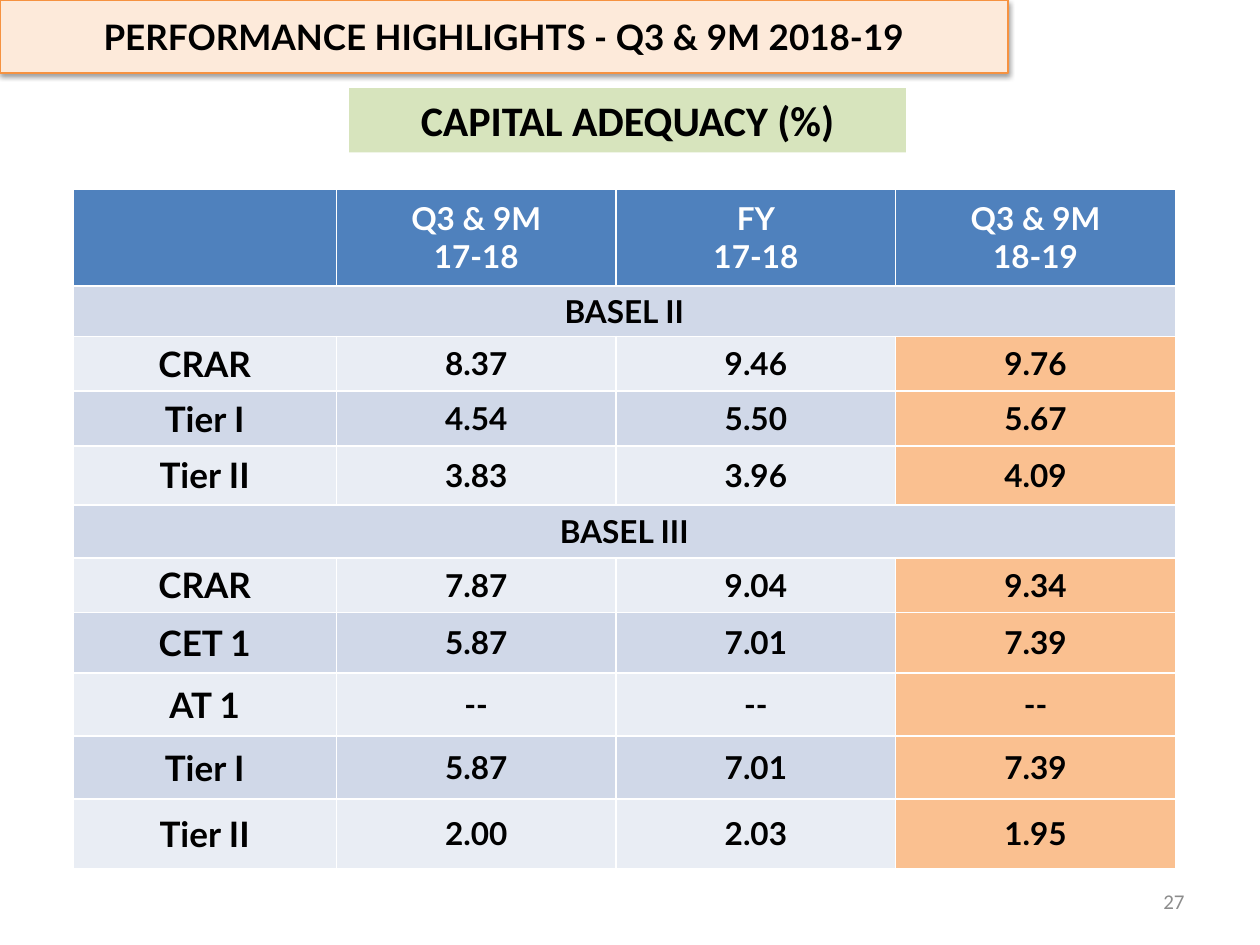
from dataclasses import dataclass

from lxml.etree import SubElement
from pptx import Presentation
from pptx.dml.color import RGBColor
from pptx.enum.shapes import MSO_SHAPE
from pptx.enum.text import MSO_ANCHOR, PP_ALIGN
from pptx.oxml import parse_xml
from pptx.oxml.ns import nsdecls, qn
from pptx.util import Inches, Pt

COLORS = {
    "black": "000000",
    "white": "FFFFFF",
    "gray": "8C8C8C",
    "banner": "FDEADA",
    "banner_line": "F69240",
    "subtitle": "D7E4BD",
    "header": "4F81BD",
    "band_dark": "D0D8E8",
    "band_light": "E9EDF4",
    "latest": "FAC090",
}


@dataclass(frozen=True)
class TextStyle:
    size: int
    color: str = "black"
    font: str = "Lato"
    bold: bool = True
    alignment: PP_ALIGN = PP_ALIGN.CENTER


@dataclass(frozen=True)
class CapitalRow:
    height: float
    label: str
    values: tuple[str, ...] = ()  # empty for a section row across the table


HEADER_HEIGHT = 0.77
HEADERS = ("", "Q3 & 9M\n17-18", "FY\n17-18", "Q3 & 9M\n18-19")
COLUMN_WIDTHS = (2.09, 2.22, 2.22, 2.22)
ROWS = (
    CapitalRow(0.4, "BASEL II"),
    CapitalRow(0.43, "CRAR", ("8.37", "9.46", "9.76")),
    CapitalRow(0.43, "Tier I", ("4.54", "5.50", "5.67")),
    CapitalRow(0.47, "Tier II", ("3.83", "3.96", "4.09")),
    CapitalRow(0.42, "BASEL III"),
    CapitalRow(0.43, "CRAR", ("7.87", "9.04", "9.34")),
    CapitalRow(0.48, "CET 1", ("5.87", "7.01", "7.39")),
    CapitalRow(0.5, "AT 1", ("--", "--", "--")),
    CapitalRow(0.5, "Tier I", ("5.87", "7.01", "7.39")),
    CapitalRow(0.55, "Tier II", ("2.00", "2.03", "1.95")),
)
VALUE_STYLE = TextStyle(18)
LABEL_STYLE = TextStyle(20)
HEADER_STYLE = TextStyle(18, "white")


def rgb(name: str) -> RGBColor:
    return RGBColor.from_string(COLORS[name])


def fill_solid(target, color: str) -> None:
    target.fill.solid()
    target.fill.fore_color.rgb = rgb(color)


def write_text(text_frame, text: str, style: TextStyle) -> None:
    """Write one paragraph for each line of the text."""
    text_frame.word_wrap = True
    for index, line in enumerate(text.split("\n")):
        paragraph = text_frame.paragraphs[0] if index == 0 else text_frame.add_paragraph()
        paragraph.alignment = style.alignment
        run = paragraph.add_run()
        run.text = line
        run.font.size = Pt(style.size)
        run.font.name = style.font
        run.font.bold = style.bold
        run.font.color.rgb = rgb(style.color)


def add_cell_borders(cell) -> None:
    properties = cell._tc.get_or_add_tcPr()
    for side in ("lnL", "lnR", "lnT", "lnB"):
        line = SubElement(properties, qn(f"a:{side}"), w=str(Pt(1)))
        fill = SubElement(line, qn("a:solidFill"))
        SubElement(fill, qn("a:srgbClr"), val=COLORS["white"])


def format_cell(cell, text: str, style: TextStyle, fill: str) -> None:
    add_cell_borders(cell)
    fill_solid(cell, fill)
    cell.vertical_anchor = MSO_ANCHOR.MIDDLE
    if text:
        write_text(cell.text_frame, text, style)


def add_banner(slide) -> None:
    title = slide.shapes.title
    title.left, title.top = Inches(0), Inches(0)
    title.width, title.height = Inches(8), Inches(0.58)
    fill_solid(title, "banner")
    title.line.color.rgb = rgb("banner_line")
    title.line.width = Pt(0.75)
    title.text_frame.vertical_anchor = MSO_ANCHOR.MIDDLE
    write_text(title.text_frame, "PERFORMANCE HIGHLIGHTS - Q3 & 9M 2018-19", TextStyle(20))
    title._element.spPr.append(parse_xml(
        f'<a:effectLst {nsdecls("a")}>'
        f'<a:outerShdw blurRad="{Pt(3.1)}" dist="{Pt(1.6)}" dir="5400000" rotWithShape="0">'
        f'<a:srgbClr val="{COLORS["black"]}"><a:alpha val="38000"/></a:srgbClr>'
        "</a:outerShdw></a:effectLst>"
    ))


def add_subtitle(slide) -> None:
    subtitle = slide.shapes.add_shape(
        MSO_SHAPE.RECTANGLE, Inches(2.77), Inches(0.7), Inches(4.42), Inches(0.51))
    subtitle.shadow.inherit = False
    fill_solid(subtitle, "subtitle")
    subtitle.line.fill.background()
    subtitle.text_frame.vertical_anchor = MSO_ANCHOR.TOP
    write_text(subtitle.text_frame, "CAPITAL ADEQUACY (%)", TextStyle(24, font="Calibri"))


def add_capital_table(slide) -> None:
    heights = (HEADER_HEIGHT, *(row.height for row in ROWS))
    table = slide.shapes.add_table(
        len(heights), len(COLUMN_WIDTHS), Inches(0.58), Inches(1.5),
        Inches(sum(COLUMN_WIDTHS)), Inches(sum(heights))).table
    for column, width in zip(table.columns, COLUMN_WIDTHS):
        column.width = Inches(width)
    for table_row, height in zip(table.rows, heights):
        table_row.height = Inches(height)

    last_column = len(COLUMN_WIDTHS) - 1
    for column_index, header in enumerate(HEADERS):
        format_cell(table.cell(0, column_index), header, HEADER_STYLE, "header")
    for row_index, row in enumerate(ROWS, start=1):
        band = "band_dark" if row_index % 2 else "band_light"
        first_cell = table.cell(row_index, 0)
        if not row.values:
            first_cell.merge(table.cell(row_index, last_column))
            format_cell(first_cell, row.label, VALUE_STYLE, band)
            continue
        format_cell(first_cell, row.label, LABEL_STYLE, band)
        for column_index, value in enumerate(row.values, start=1):
            fill = "latest" if column_index == last_column else band
            format_cell(table.cell(row_index, column_index), value, VALUE_STYLE, fill)


def add_page_number(slide) -> None:
    box = slide.shapes.add_textbox(Inches(7.17), Inches(6.95), Inches(2.33), Inches(0.4))
    box.text_frame.vertical_anchor = MSO_ANCHOR.MIDDLE
    write_text(box.text_frame, "27", TextStyle(12, "gray", "Calibri", False, PP_ALIGN.RIGHT))


def main() -> None:
    presentation = Presentation()
    presentation.slide_width = Inches(10)
    presentation.slide_height = Inches(7.5)
    slide = presentation.slides.add_slide(presentation.slide_layouts.get_by_name("Title Only"))
    add_subtitle(slide)
    add_page_number(slide)
    add_banner(slide)
    add_capital_table(slide)
    presentation.save("out.pptx")


if __name__ == "__main__":
    main()
